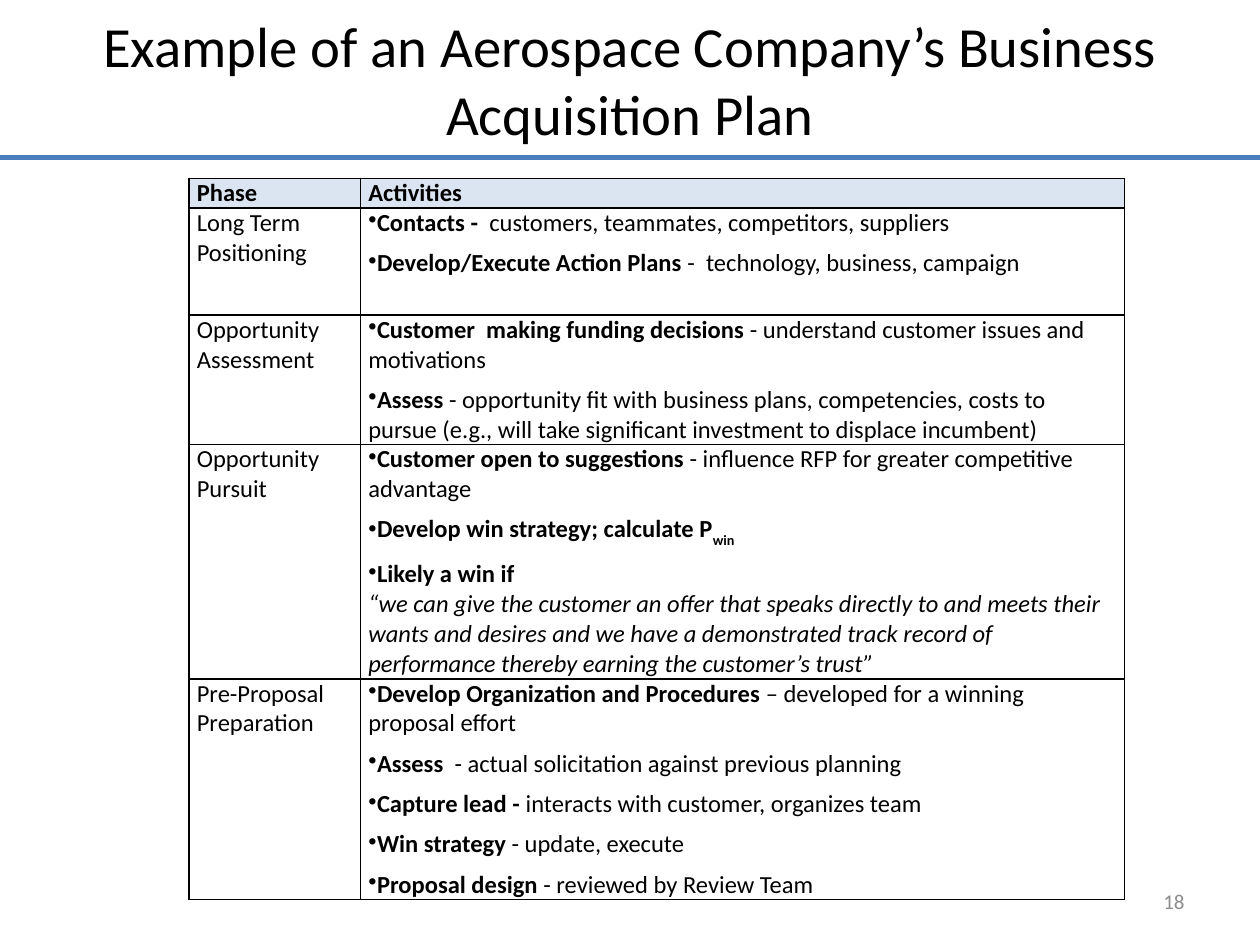
from pptx import Presentation
from pptx.dml.color import RGBColor
from pptx.enum.shapes import MSO_CONNECTOR
from pptx.enum.text import MSO_ANCHOR, PP_ALIGN
from pptx.oxml.ns import qn
from pptx.util import Pt
from lxml.etree import SubElement

BLACK = RGBColor(0, 0, 0)
GRAY = RGBColor(0x8C, 0x8C, 0x8C)
BLUE = RGBColor(0x4B, 0x7E, 0xBC)
PALE = RGBColor(0xDB, 0xE5, 0xF1)

COLS = [98, 436.5]
ROWS = [17, 61, 74, 134, 126]

# Each activity is a bold lead and a plain rest.
PHASES = [
    ("Long Term Positioning", [
        ("Contacts -  ", "customers, teammates, competitors, suppliers"),
        ("Develop/Execute Action Plans", " -  technology, business, campaign"),
    ]),
    ("Opportunity Assessment", [
        ("Customer  making funding decisions ",
         "- understand customer issues and motivations"),
        ("Assess ",
         "- opportunity fit with business plans, competencies, costs to pursue "
         "(e.g., will take significant investment to displace incumbent)"),
    ]),
    ("Opportunity Pursuit", [
        ("Customer open to suggestions ",
         "- influence RFP for greater competitive advantage"),
        ("Develop win strategy; calculate P", "win", "sub"),
        ("Likely a win if ",
         "“we can give the customer an offer that speaks directly to and meets "
         "their wants and desires and we have a demonstrated track record of "
         "performance thereby earning the customer’s trust”", "quote"),
    ]),
    ("Pre-Proposal Preparation", [
        ("Develop Organization and Procedures ",
         "– developed for a winning proposal effort"),
        ("Assess ", " - actual solicitation against previous planning"),
        ("Capture lead - ", "interacts with customer, organizes team"),
        ("Win strategy ", "- update, execute"),
        ("Proposal design ", "- reviewed by Review Team"),
    ]),
]


class Deck:
    face = "Calibri"
    body = 14

    def __init__(self, slide):
        self.slide = slide

    def style(self, para, size, color=BLACK, bold=None):
        font = para.font
        font.name, font.size, font.bold = self.face, Pt(size), bold
        font.color.rgb = color

    def rule(self, y, width):
        line = self.slide.shapes.add_connector(
            MSO_CONNECTOR.STRAIGHT, 0, Pt(y), Pt(width), Pt(y))
        line.line.color.rgb = BLUE
        line.line.width = Pt(3)
        SubElement(line._element.spPr, qn("a:effectLst"))

    def text(self, words, box, size, align, color=BLACK):
        frame = self.slide.shapes.add_textbox(*map(Pt, box)).text_frame
        frame.word_wrap = True
        frame.vertical_anchor = MSO_ANCHOR.MIDDLE
        para = frame.paragraphs[0]
        para.text, para.alignment = words, align
        self.style(para, size, color)

    def table(self, left, top):
        grid = self.slide.shapes.add_table(
            len(ROWS), len(COLS), Pt(left), Pt(top),
            Pt(sum(COLS)), Pt(sum(ROWS))).table
        for col, width in zip(grid.columns, COLS):
            col.width = Pt(width)
        for row, height in zip(grid.rows, ROWS):
            row.height = Pt(height)
        for cell, head in zip(grid.rows[0].cells, ("Phase", "Activities")):
            self.label(cell, head, True)
        for row, (phase, acts) in enumerate(PHASES, 1):
            self.label(grid.cell(row, 0), phase)
            self.acts(grid.cell(row, 1), acts)

    def cell(self, cell, fill=None):
        """Set margins, black borders and fill."""
        cell.margin_left = cell.margin_right = Pt(4.5)
        cell.margin_top = cell.margin_bottom = 0
        props = cell._tc.get_or_add_tcPr()
        for side in ("lnL", "lnR", "lnT", "lnB"):
            edge = SubElement(props, qn("a:" + side), w=str(Pt(1)))
            paint = SubElement(edge, qn("a:solidFill"))
            SubElement(paint, qn("a:srgbClr"), val=str(BLACK))
        if fill is None:
            cell.fill.background()
        else:
            cell.fill.solid()
            cell.fill.fore_color.rgb = fill

    def label(self, cell, words, head=False):
        self.cell(cell, PALE if head else None)
        cell.text = words
        self.style(cell.text_frame.paragraphs[0], self.body, bold=head)

    def acts(self, cell, acts):
        self.cell(cell)
        frame = cell.text_frame
        for i, act in enumerate(acts):
            para = frame.add_paragraph() if i else frame.paragraphs[0]
            self.bullet(para, *act)

    def bullet(self, para, lead, rest, kind="plain"):
        """Write a lead and its rest, which may be a subscript or a quote."""
        para.space_after = Pt(6)
        props = para._p.get_or_add_pPr()
        props.set("marL", "0")
        props.set("indent", str(Pt(-7.2)))
        SubElement(props, qn("a:buChar"), char="•")
        self.style(para, self.body)
        first = para.add_run()
        first.text, first.font.bold = lead, True
        if kind == "quote":
            para.add_line_break()
        last = para.add_run()
        last.text = rest
        last.font.bold = kind == "sub"
        last.font.italic = kind == "quote"
        if kind == "sub":
            last._r.get_or_add_rPr().set("baseline", "-30000")


def main():
    show = Presentation()
    show.slide_width, show.slide_height = Pt(720), Pt(540)
    deck = Deck(show.slides.add_slide(show.slide_layouts[6]))
    deck.rule(90, 720)
    deck.text("Example of an Aerospace Company’s Business Acquisition Plan",
              (36, 0, 648, 90), 32.4, PP_ALIGN.CENTER)
    deck.text("18", (516, 500.5, 168, 28.75), 12, PP_ALIGN.RIGHT, GRAY)
    deck.table(108, 102)
    show.save("out.pptx")


if __name__ == "__main__":
    main()
